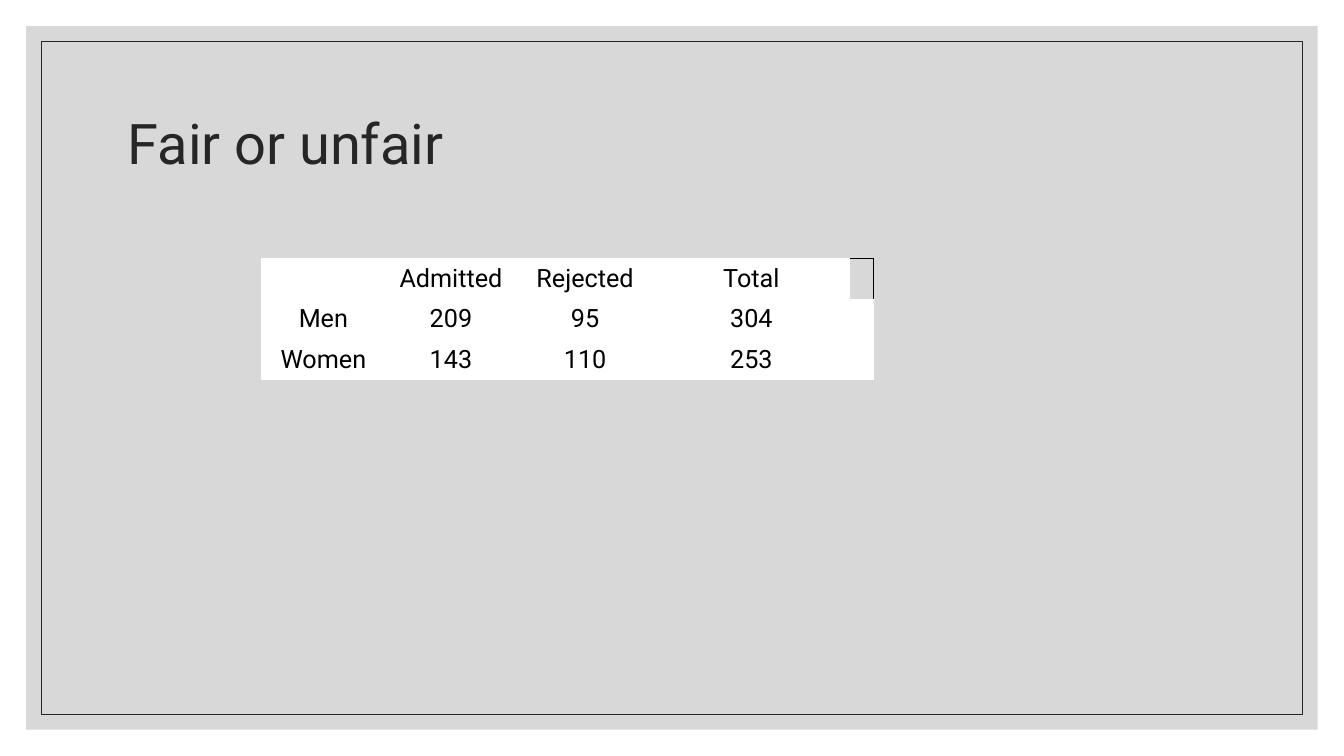
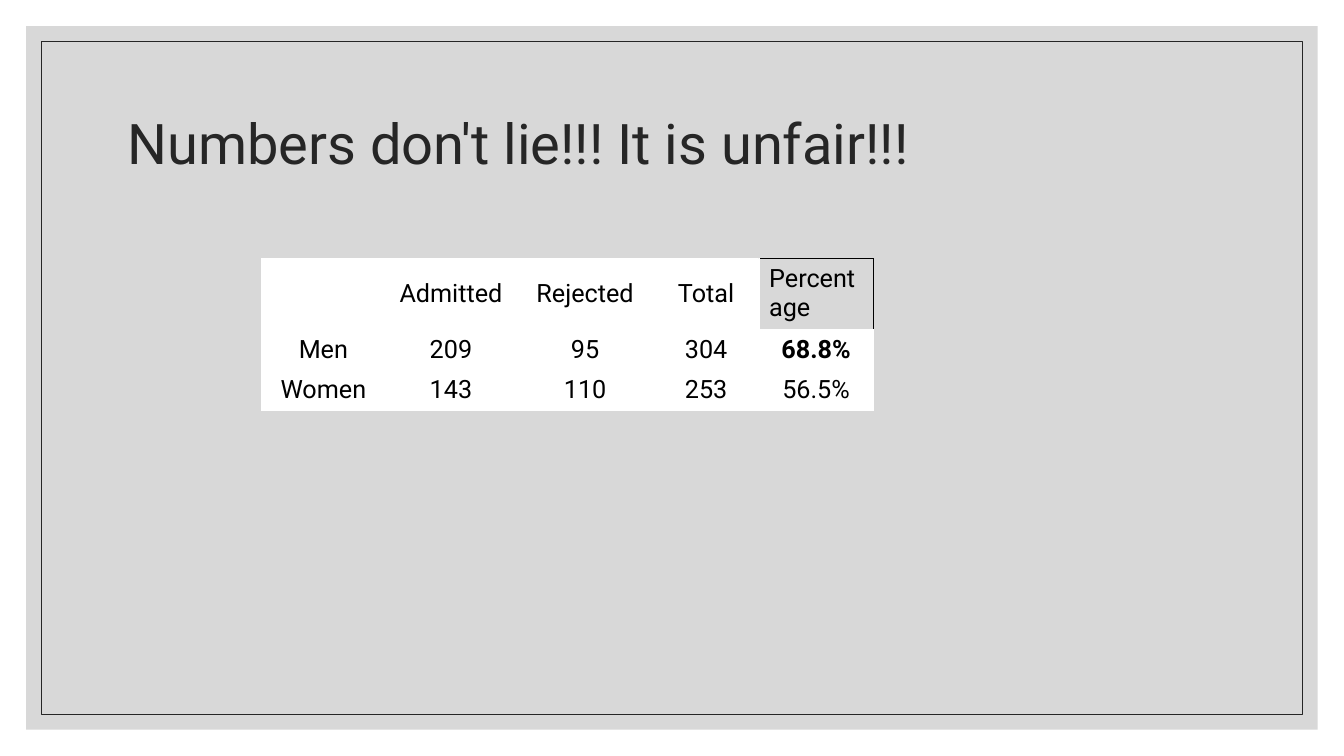
from lxml.etree import SubElement
from pptx import Presentation
from pptx.dml.color import RGBColor
from pptx.enum.shapes import MSO_SHAPE as Shape
from pptx.enum.text import MSO_ANCHOR as Anchor, PP_ALIGN as Align
from pptx.oxml.ns import qn
from pptx.util import Cm, Pt

COLORS = {
    "panel": "BFBFBF",
    "ink": "262626",
    "text": "000000",
    "cell": "FFFFFF",
    "corner": "000000",
}
FONT = "Roboto"
PAGE_WIDTH, PAGE_HEIGHT = 33.87, 19.05
TABLE_LEFT, TABLE_TOP = 6.6, 6.52
ROW_HEIGHT = 1.01


def color(name):
    return RGBColor.from_string(COLORS[name])


def add_span(para, text, size, color_name, bold=False):
    span = para.add_run()
    span.text = text
    span.font.name = FONT
    span.font.size = Pt(size)
    span.font.bold = bold
    span.font.color.rgb = color(color_name)


def add_inset_box(page, margin):
    """Add a rectangle that keeps the same margin to all page edges."""
    box = page.shapes.add_shape(
        Shape.RECTANGLE, Cm(margin), Cm(margin),
        Cm(PAGE_WIDTH - 2 * margin), Cm(PAGE_HEIGHT - 2 * margin))
    box.shadow.inherit = False
    return box


def add_frame(page):
    panel = add_inset_box(page, 0.66)
    panel.fill.solid()
    panel.fill.fore_color.rgb = color("panel")
    panel.line.fill.background()
    tint = panel.fill._xPr.find(qn("a:solidFill"))[0]
    SubElement(tint, qn("a:alpha"), val="60000")

    outline = add_inset_box(page, 1.04)
    outline.fill.background()
    outline.line.color.rgb = color("ink")
    outline.line.width = Pt(0.5)


def add_title(page, text):
    box = page.shapes.add_textbox(Cm(2.97), Cm(1.78), Cm(27.94), Cm(3.81))
    frame = box.text_frame
    frame.word_wrap = True
    frame.vertical_anchor = Anchor.MIDDLE
    para = frame.paragraphs[0]
    para.line_spacing = 0.9
    add_span(para, text, 40, "ink")


def set_borders(cell, **sides):
    """Set borders by side letter (L, R, T, B) and colour name."""
    props = cell._tc.get_or_add_tcPr()
    for side in "LRTB":
        line = SubElement(props, qn("a:ln" + side), w=str(Pt(0.75)))
        fill = SubElement(line, qn("a:solidFill"))
        SubElement(fill, qn("a:srgbClr"), val=COLORS[sides.get(side, "cell")])


def fill_cell(cell, text, is_corner, bold):
    para = cell.text_frame.paragraphs[0]
    if text:
        add_span(para, text, 18, "text", bold)
    else:
        end = SubElement(para._p, qn("a:endParaRPr"), sz="1800")
        SubElement(end, qn("a:latin"), typeface=FONT)

    if is_corner:
        set_borders(cell, T="corner", R="corner")
        cell.fill.background()
    else:
        para.alignment = Align.CENTER
        cell.vertical_anchor = Anchor.MIDDLE
        set_borders(cell)
        cell.fill.solid()
        cell.fill.fore_color.rgb = color("cell")


def add_admissions_table(page, last_column, widths, header_height, bold_text):
    rows = [
        ["", "Admitted", "Rejected", "Total"],
        ["Men", "209", "95", "304"],
        ["Women", "143", "110", "253"],
    ]
    rows = [row + [extra] for row, extra in zip(rows, last_column)]
    heights = [header_height] + [ROW_HEIGHT] * (len(rows) - 1)
    table = page.shapes.add_table(
        len(rows), len(widths), Cm(TABLE_LEFT), Cm(TABLE_TOP),
        Cm(sum(widths)), Cm(sum(heights))).table
    table.first_row = False
    table.horz_banding = False
    for column, width in zip(table.columns, widths):
        column.width = Cm(width)
    for row, height in zip(table.rows, heights):
        row.height = Cm(height)

    for r, row in enumerate(rows):
        for c, text in enumerate(row):
            is_corner = r == 0 and c == len(widths) - 1
            fill_cell(table.cell(r, c), text, is_corner, text == bold_text)


def add_page(deck, title, last_column, last_widths, header_height=ROW_HEIGHT,
             bold_text=None):
    page = deck.slides.add_slide(deck.slide_layouts[6])
    add_frame(page)
    add_title(page, title)
    add_admissions_table(page, last_column, [3.1, 3.33, 3.43] + last_widths,
                         header_height, bold_text)


def main():
    deck = Presentation()
    deck.slide_width, deck.slide_height = Cm(PAGE_WIDTH), Cm(PAGE_HEIGHT)
    add_page(deck, "Fair or unfair", ["", "", ""], [4.95, 0.6])
    add_page(deck, "Numbers don't lie!!! It is unfair!!!",
             ["Percentage", "68.8%", "56.5%"], [2.67, 2.87],
             header_height=1.76, bold_text="68.8%")
    deck.save("out.pptx")


if __name__ == "__main__":
    main()
